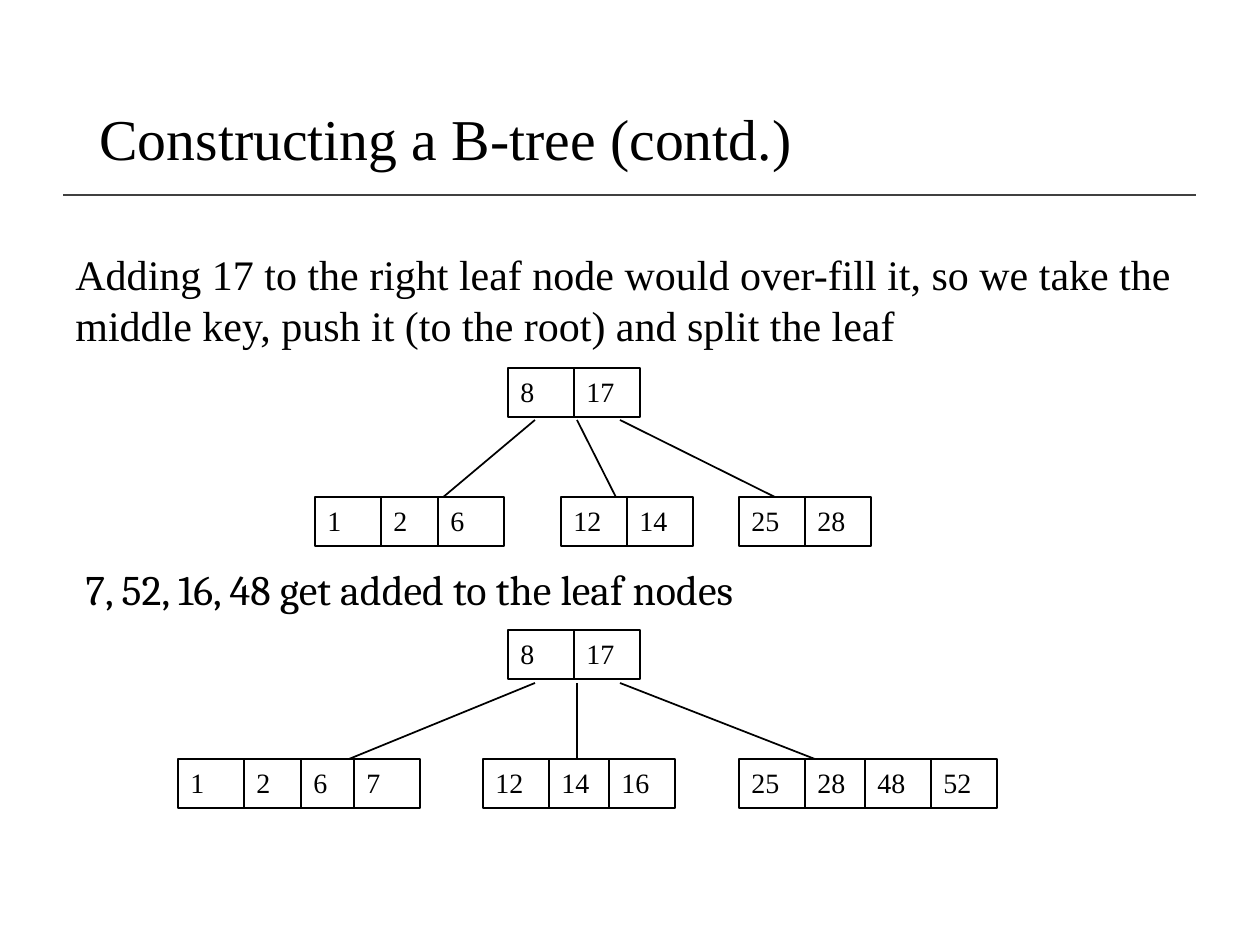
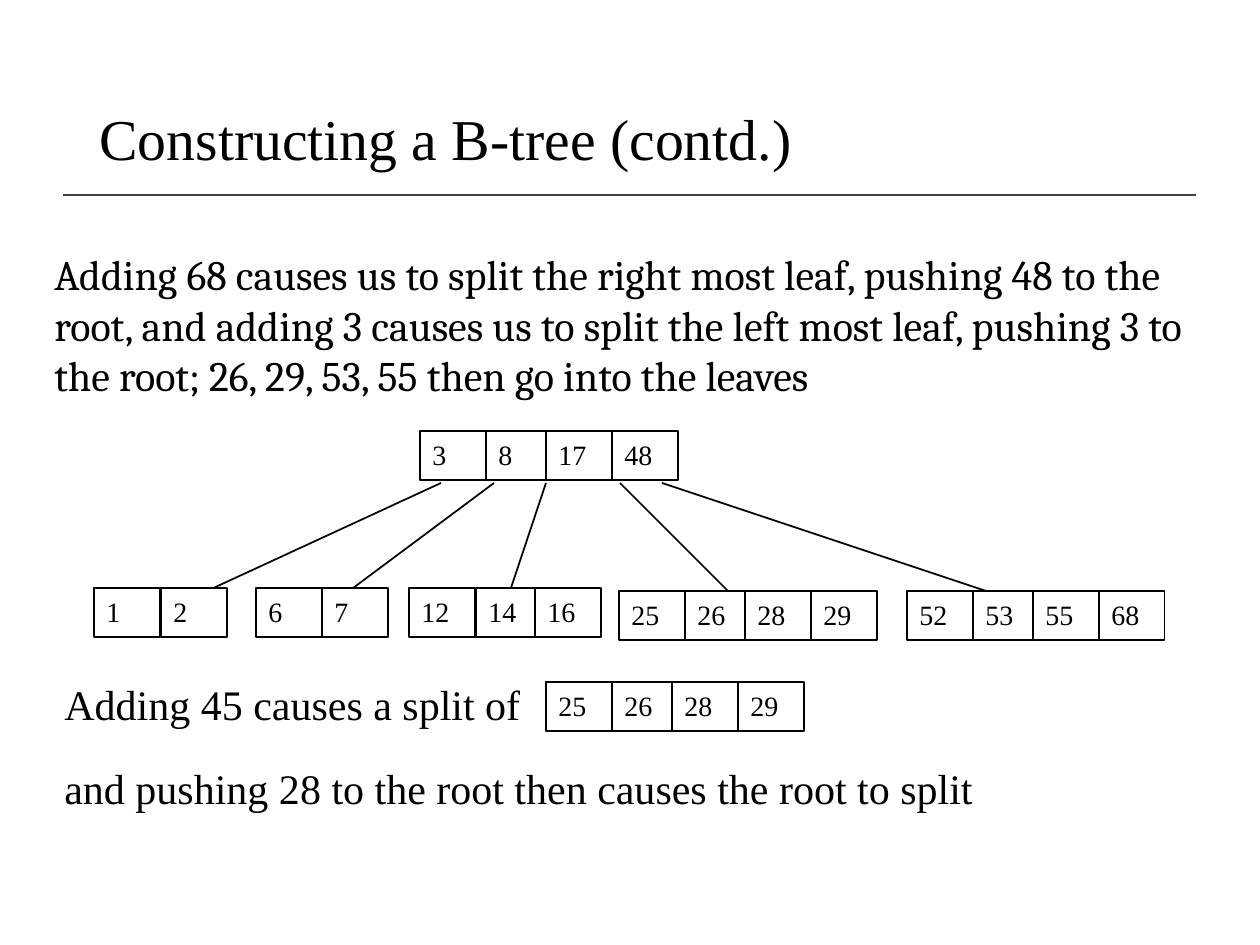
"""Build two slides that show how keys are added to a B-tree."""
from dataclasses import dataclass

from lxml.etree import SubElement
from pptx import Presentation
from pptx.dml.color import RGBColor
from pptx.enum.shapes import MSO_CONNECTOR, MSO_SHAPE
from pptx.enum.text import MSO_ANCHOR, PP_ALIGN
from pptx.oxml.ns import qn
from pptx.util import Emu, Pt


@dataclass(frozen=True)
class Theme:
    ink: RGBColor = RGBColor(0, 0, 0)
    paper: RGBColor = RGBColor(255, 255, 255)
    rule: RGBColor = RGBColor(64, 64, 64)
    serif: str = "Times New Roman"
    alternate: str = "Cambria"
    title_size: Pt = Pt(33)
    body_size: Pt = Pt(24)
    key_size: Pt = Pt(16)
    body_leading: Pt = Pt(29)
    edge_width: Pt = Pt(1)
    key_border: Pt = Pt(0.75)


theme = Theme()
PX = 914400 / 126
KEY_WIDTH, KEY_HEIGHT = 66, 49


def write(shape, text, size, font=theme.serif, leading=None):
    """Put left-aligned text into a shape."""
    paragraph = shape.text_frame.paragraphs[0]
    paragraph.text = text
    paragraph.alignment = PP_ALIGN.LEFT
    if leading:
        paragraph.line_spacing = leading
    run_font = paragraph.runs[0].font
    run_font.name, run_font.size = font, size
    run_font.color.rgb = theme.ink


def add_line(slide, start, end, color):
    """Draw a straight line between two points in px."""
    points = [Emu(round(value * PX)) for value in (*start, *end)]
    line = slide.shapes.add_connector(MSO_CONNECTOR.STRAIGHT, *points)
    line.line.color.rgb = color
    line.line.width = theme.edge_width
    SubElement(line._element.spPr, qn("a:effectLst"))


slides = [
    {
        "texts": [
            (63, 242, 1155, 115, theme.serif,
             "Adding 17 to the right leaf node would over-fill it, so we take the "
             "middle key, push it (to the root) and split the leaf"),
            (73, 557, 1134, 63, theme.alternate, "7, 52, 16, 48 get added to the leaf nodes"),
        ],
        "edges": [
            ((535, 420), (410, 525)),
            ((577, 420), (630, 525)),
            ((620, 420), (809, 514)),
            ((535, 683), (305, 777)),
            ((577, 683), (577, 788)),
            ((620, 683), (861, 777)),
        ],
        "nodes": [
            (368, {508: "8", 574: "17"}),
            (497, {315: "1", 381: "2", 438: "6"}),
            (497, {561: "12", 627: "14"}),
            (497, {739: "25", 805: "28"}),
            (630, {508: "8", 574: "17"}),
            (759, {178: "1", 244: "2", 301: "6", 354: "7"}),
            (759, {483: "12", 549: "14", 609: "16"}),
            (759, {739: "25", 805: "28", 865: "48", 931: "52"}),
        ],
    },
    {
        "texts": [
            (42, 242, 1176, 165, theme.alternate,
             "Adding 68 causes us to split the right most leaf, pushing 48 to the "
             "root, and adding 3 causes us to split the left most leaf, pushing 3 to "
             "the root; 26, 29, 53, 55 then go into the leaves"),
            (52, 672, 504, 63, theme.serif, "Adding 45 causes a split of"),
            (52, 756, 1144, 63, theme.serif,
             "and pushing 28 to the root then causes the root to split"),
        ],
        "edges": [
            ((441, 483), (168, 609)),
            ((494, 483), (325, 609)),
            ((546, 483), (504, 609)),
            ((620, 483), (746, 609)),
            ((662, 483), (1040, 609)),
        ],
        "nodes": [
            (431, {420: "3", 486: "8", 546: "17", 612: "48"}),
            (588, {94: "1", 161: "2"}),
            (588, {256: "6", 322: "7"}),
            (588, {409: "12", 476: "14", 535: "16"}),
            (591, {619: "25", 685: "26", 745: "28", 811: "29"}),
            (591, {907: "52", 973: "53", 1033: "55", 1099: "68"}),
            (682, {546: "25", 612: "26", 672: "28", 738: "29"}),
        ],
    },
]

presentation = Presentation()
presentation.slide_width = Emu(round(1260 * PX))
presentation.slide_height = Emu(round(945 * PX))

for content in slides:
    slide = presentation.slides.add_slide(presentation.slide_layouts[6])
    slide.background.fill.solid()
    slide.background.fill.fore_color.rgb = theme.paper

    add_line(slide, (63, 195), (1196, 195), theme.rule)
    for start, end in content["edges"]:
        add_line(slide, start, end, theme.ink)

    title = slide.shapes.add_textbox(*[Emu(round(v * PX)) for v in (87, 50, 1086, 183)])
    title.text_frame.word_wrap = True
    title.text_frame.vertical_anchor = MSO_ANCHOR.MIDDLE
    write(title, "Constructing a B-tree (contd.)", theme.title_size, leading=0.9)

    for *box, font, text in content["texts"]:
        body = slide.shapes.add_textbox(*[Emu(round(v * PX)) for v in box])
        body.text_frame.word_wrap = True
        write(body, text, theme.body_size, font, theme.body_leading)

    for top, keys in content["nodes"]:
        for left, label in keys.items():
            box = (left, top, KEY_WIDTH, KEY_HEIGHT)
            key = slide.shapes.add_shape(
                MSO_SHAPE.RECTANGLE, *[Emu(round(v * PX)) for v in box])
            key.shadow.inherit = False
            key.fill.solid()
            key.fill.fore_color.rgb = theme.paper
            key.line.color.rgb = theme.ink
            key.line.width = theme.key_border
            key.text_frame.word_wrap = False
            key.text_frame.vertical_anchor = MSO_ANCHOR.TOP
            write(key, label, theme.key_size)

presentation.save("out.pptx")
